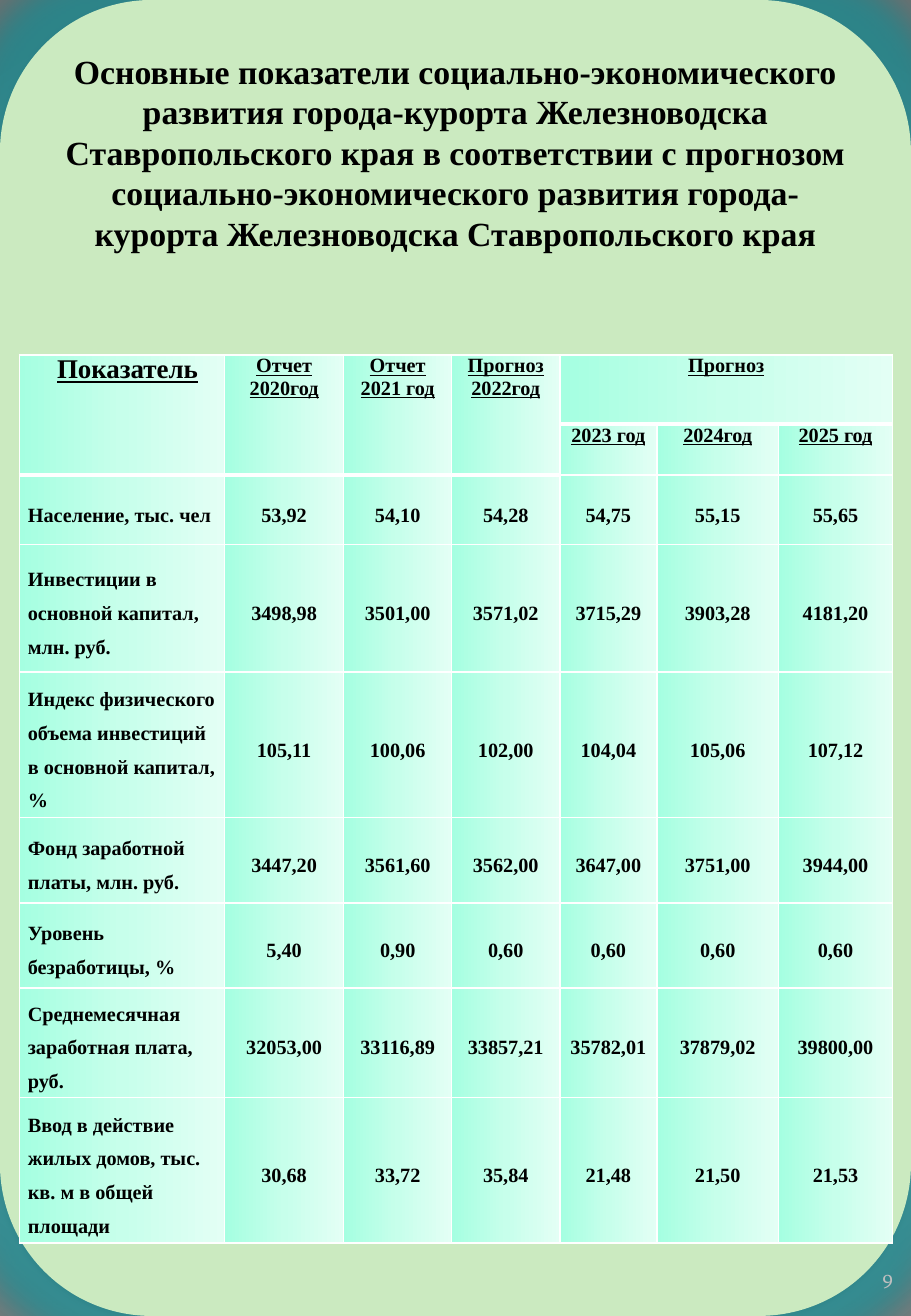
from pptx import Presentation
from pptx.dml.color import RGBColor
from pptx.enum.shapes import MSO_SHAPE
from pptx.enum.text import MSO_ANCHOR, PP_ALIGN
from pptx.oxml import parse_xml
from pptx.oxml.ns import nsdecls
from pptx.util import Inches, Pt

ROUNDED = MSO_SHAPE.ROUNDED_RECTANGLE
LEFT, CENTER, RIGHT = PP_ALIGN.LEFT, PP_ALIGN.CENTER, PP_ALIGN.RIGHT
TOP, MIDDLE, BOTTOM = MSO_ANCHOR.TOP, MSO_ANCHOR.MIDDLE, MSO_ANCHOR.BOTTOM

BLACK = RGBColor(0x00, 0x00, 0x00)
WHITE = RGBColor(0xFF, 0xFF, 0xFF)
GRAY = RGBColor(0x70, 0x70, 0x70)
PALE_GRAY = RGBColor(0xBF, 0xBF, 0xBF)
PALE_GREEN = RGBColor(0xCB, 0xEA, 0xC0)
TEAL = RGBColor(0x10, 0xA0, 0xA8)
CELL_STOPS = [
    (0, RGBColor(0xA5, 0xFF, 0xE1)),
    (50, RGBColor(0xC7, 0xFF, 0xEB)),
    (100, RGBColor(0xE3, 0xFF, 0xF5)),
]
BACKGROUND_STOPS = [(0, WHITE), (25, WHITE), (100, GRAY)]

SERIF = "Times New Roman"
NUMBER_FONT = "Vollkorn"

PAGE_WIDTH, PAGE_HEIGHT = 7.5, 10.83
TITLE = (
    "Основные показатели социально-экономического развития города-курорта "
    "Железноводска Ставропольского края в соответствии с прогнозом "
    "социально-экономического развития города-курорта Железноводска "
    "Ставропольского края"
)
COLUMN_WIDTHS = [1.69, 0.98, 0.89, 0.89, 0.8, 1, 0.94]
ROW_HEIGHTS = [0.57, 0.42, 0.57, 1.05, 1.05, 0.7, 0.7, 0.85, 1.13]
HEADING_ROWS = 2
FORECAST_COLUMN = 4
ROWS = [
    ["Показатель", "Отчет\n2020год", "Отчет\n2021 год", "Прогноз\n2022год", "Прогноз", "", ""],
    ["", "", "", "", "2023 год", "2024год", "2025 год"],
    ["Население, тыс. чел", "53,92", "54,10", "54,28", "54,75", "55,15", "55,65"],
    ["Инвестиции в основной капитал, млн. руб.",
     "3498,98", "3501,00", "3571,02", "3715,29", "3903,28", "4181,20"],
    ["Индекс физического объема инвестиций в основной капитал, %",
     "105,11", "100,06", "102,00", "104,04", "105,06", "107,12"],
    ["Фонд заработной платы, млн. руб.",
     "3447,20", "3561,60", "3562,00", "3647,00", "3751,00", "3944,00"],
    ["Уровень безработицы, %", "5,40", "0,90", "0,60", "0,60", "0,60", "0,60"],
    ["Среднемесячная заработная плата, руб.",
     "32053,00", "33116,89", "33857,21", "35782,01", "37879,02", "39800,00"],
    ["Ввод в действие жилых домов, тыс. кв. м в общей площади",
     "30,68", "33,72", "35,84", "21,48", "21,50", "21,53"],
]


def gradient_xml(stops, shade):
    marks = "".join(
        f'<a:gs pos="{position * 1000}"><a:srgbClr val="{color}"/></a:gs>'
        for position, color in stops
    )
    return f'<a:gradFill {nsdecls("a")}><a:gsLst>{marks}</a:gsLst>{shade}</a:gradFill>'


def style_text(frame, size, font=SERIF, color=BLACK, bold=True, align=CENTER):
    for paragraph in frame.paragraphs:
        paragraph.alignment = align
        paragraph.font.name = font
        paragraph.font.size = Pt(size)
        paragraph.font.bold = bold
        paragraph.font.color.rgb = color


def set_background(slide):
    shade = (
        '<a:path path="circle">'
        '<a:fillToRect l="10000" t="110000" r="10000" b="100000"/></a:path>'
    )
    fill = gradient_xml(BACKGROUND_STOPS, shade)
    slide.element.cSld.insert(0, parse_xml(
        f'<p:bg {nsdecls("p", "a")}><p:bgPr>{fill}<a:effectLst/></p:bgPr></p:bg>'
    ))


def add_title_panel(slide, left, top, width, height):
    panel = slide.shapes.add_shape(
        ROUNDED, Inches(left), Inches(top), Inches(width), Inches(height)
    )
    panel.fill.solid()
    panel.fill.fore_color.rgb = PALE_GREEN
    panel.line.fill.background()
    panel.element.spPr.append(parse_xml(
        f'<a:effectLst {nsdecls("a")}>'
        f'<a:glow rad="{Pt(40)}"><a:srgbClr val="{TEAL}"><a:alpha val="60000"/></a:srgbClr></a:glow>'
        f'<a:outerShdw blurRad="{Pt(3.5)}" dist="{Pt(2.2)}" dir="5400000" rotWithShape="0">'
        f'<a:srgbClr val="{BLACK}"><a:alpha val="32000"/></a:srgbClr></a:outerShdw>'
        '</a:effectLst>'
    ))
    frame = panel.text_frame
    frame.word_wrap = True
    frame.vertical_anchor = TOP
    frame.text = TITLE
    style_text(frame, 20)


def add_page_number(slide, left, top, width, height):
    box = slide.shapes.add_textbox(
        Inches(left), Inches(top), Inches(width), Inches(height)
    )
    frame = box.text_frame
    frame.word_wrap = True
    frame.margin_left = frame.margin_top = frame.margin_right = frame.margin_bottom = 0
    frame.vertical_anchor = BOTTOM
    frame.text = "9"
    style_text(frame, 12, NUMBER_FONT, PALE_GRAY, bold=False, align=RIGHT)


def paint_cell(cell, top_width, bottom_width):
    """Give the cell white borders and a gradient from left to right."""
    properties = cell._tc.get_or_add_tcPr()
    for side, width in (("L", 1), ("R", 1), ("T", top_width), ("B", bottom_width)):
        properties.append(parse_xml(
            f'<a:ln{side} {nsdecls("a")} w="{Pt(width)}"><a:solidFill>'
            f'<a:srgbClr val="{WHITE}"/></a:solidFill></a:ln{side}>'
        ))
    properties.append(parse_xml(gradient_xml(CELL_STOPS, '<a:lin ang="0" scaled="0"/>')))


def ends_heading(row, column):
    return row == 0 or (row == 1 and column < FORECAST_COLUMN)


def add_indicator_table(slide, left, top, width, height):
    table = slide.shapes.add_table(
        len(ROWS), len(COLUMN_WIDTHS),
        Inches(left), Inches(top), Inches(width), Inches(height),
    ).table
    for column, column_width in zip(table.columns, COLUMN_WIDTHS):
        column.width = Inches(column_width)
    for row, row_height in zip(table.rows, ROW_HEIGHTS):
        row.height = Inches(row_height)

    for row, texts in enumerate(ROWS):
        heading = row < HEADING_ROWS
        for column, text in enumerate(texts):
            cell = table.cell(row, column)
            cell.margin_left = cell.margin_right = Inches(0.07)
            cell.margin_top = cell.margin_bottom = 0
            cell.vertical_anchor = TOP if heading else MIDDLE
            cell.text = text
            align = CENTER if heading or column else LEFT
            style_text(cell.text_frame, 16 if row == column == 0 else 12, align=align)
            for paragraph in cell.text_frame.paragraphs:
                paragraph.font.underline = heading
                paragraph.line_spacing = 1.0 if heading else 1.5
            top_thick = row > 0 and ends_heading(row - 1, column) and not (
                row == 1 and column < FORECAST_COLUMN
            )
            paint_cell(cell, 3 if top_thick else 1, 3 if ends_heading(row, column) else 1)

    corner = table.cell(0, 0).text_frame.paragraphs[0]
    corner._p.get_or_add_pPr().set("indent", str(Inches(0.09)))
    for column in range(FORECAST_COLUMN):
        table.cell(0, column).merge(table.cell(1, column))
    table.cell(0, FORECAST_COLUMN).merge(table.cell(0, len(COLUMN_WIDTHS) - 1))


def main():
    deck = Presentation()
    deck.slide_width = Inches(PAGE_WIDTH)
    deck.slide_height = Inches(PAGE_HEIGHT)
    slide = deck.slides.add_slide(deck.slide_layouts[6])
    set_background(slide)
    add_title_panel(slide, 0, 0, PAGE_WIDTH, PAGE_HEIGHT)
    add_page_number(slide, 6.92, 10.03, 0.43, 0.58)
    add_indicator_table(slide, 0.16, 2.92, sum(COLUMN_WIDTHS), sum(ROW_HEIGHTS))
    deck.save("out.pptx")


if __name__ == "__main__":
    main()
